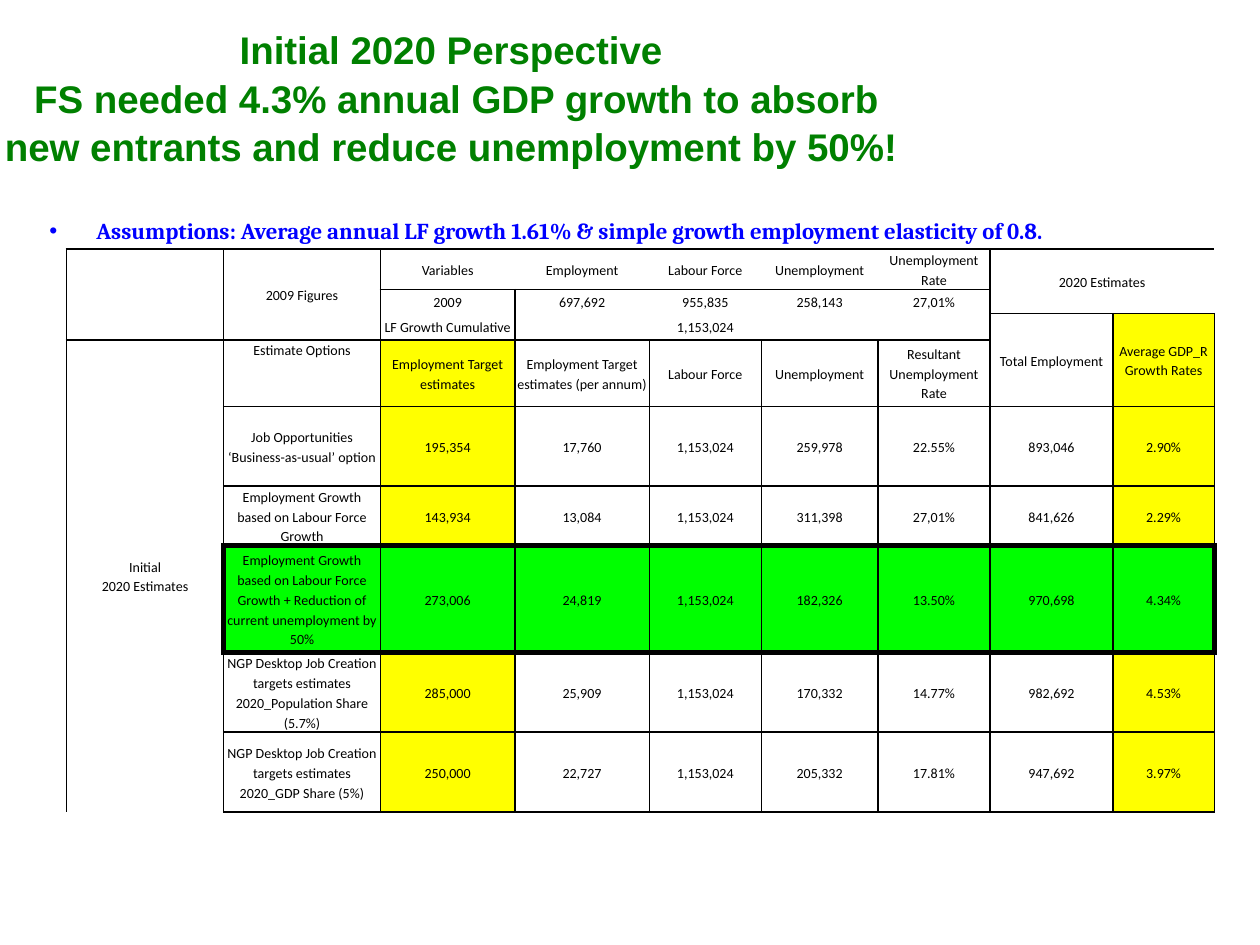
from lxml import etree
from pptx import Presentation
from pptx.dml.color import RGBColor
from pptx.enum.text import MSO_ANCHOR, MSO_AUTO_SIZE, PP_ALIGN
from pptx.oxml.ns import qn
from pptx.util import Cm, Pt

CENTER, JUSTIFY = PP_ALIGN.CENTER, PP_ALIGN.JUSTIFY
TOP, MIDDLE = MSO_ANCHOR.TOP, MSO_ANCHOR.MIDDLE
NO_AUTOFIT = MSO_AUTO_SIZE.NONE

BLACK = RGBColor(0, 0, 0)
BLUE = RGBColor(0, 0, 0xFF)
DARK_GREEN = RGBColor(0, 0x80, 0)
LIME = RGBColor(0, 0xFF, 0)
YELLOW = RGBColor(0xFF, 0xFF, 0)

COLUMN_WIDTHS = [3.17, 3.16, 2.71, 2.71, 2.26, 2.35, 2.26, 2.48, 2.04]
ROW_HEIGHTS = [0.82, 0.48, 0.53, 1.34, 1.61, 1.2, 2.16, 1.6, 1.61]
ROWS = [
    ["", "2009 Figures", "Variables", "Employment", "Labour Force", "Unemployment",
     "Unemployment Rate", "2020 Estimates", ""],
    ["", "", "2009", "697,692", "955,835", "258,143", "27,01%", "", ""],
    ["", "", "LF Growth Cumulative", "", "1,153,024", "", "",
     "Total Employment", "Average GDP_R Growth Rates"],
    ["Initial\n2020 Estimates", "Estimate Options", "Employment Target estimates",
     "Employment Target estimates (per annum)", "Labour Force", "Unemployment",
     "Resultant Unemployment Rate", "", ""],
    ["", "Job Opportunities ‘Business-as-usual’ option", "195,354", "17,760",
     "1,153,024", "259,978", "22.55%", "893,046", "2.90%"],
    ["", "Employment Growth based on Labour Force Growth", "143,934", "13,084",
     "1,153,024", "311,398", "27,01%", "841,626", "2.29%"],
    ["", "Employment Growth based on Labour Force Growth + Reduction of current "
     "unemployment by 50%", "273,006", "24,819", "1,153,024", "182,326", "13.50%",
     "970,698", "4.34%"],
    ["", "NGP Desktop Job Creation targets estimates 2020_Population Share (5.7%)",
     "285,000", "25,909", "1,153,024", "170,332", "14.77%", "982,692", "4.53%"],
    ["", "NGP Desktop Job Creation targets estimates 2020_GDP Share (5%)",
     "250,000", "22,727", "1,153,024", "205,332", "17.81%", "947,692", "3.97%"],
]
# Blocks are (first row, first column, last row, last column).
MERGED_BLOCKS = [(0, 1, 2, 1), (0, 7, 1, 8), (2, 7, 3, 7), (2, 8, 3, 8), (3, 0, 8, 0)]
UNRULED_BLOCKS = [(0, 0, 2, 0), (0, 2, 0, 6), (1, 2, 2, 2), (1, 3, 2, 6)]
SIDES = {"a:lnL": (0, -1), "a:lnR": (0, 1), "a:lnT": (-1, 0), "a:lnB": (1, 0)}
OPTION_ROW = 4
TARGET_ROW = 6


def add_span(para, text, font_name, size, color, bold=False):
    span = para.add_run()
    span.text = text
    font = span.font
    font.name, font.size, font.bold = font_name, Pt(size), bold
    font.color.rgb = color


def place(shape, left, top, width, height):
    shape.left, shape.top = Cm(left), Cm(top)
    shape.width, shape.height = Cm(width), Cm(height)
    frame = shape.text_frame
    frame.word_wrap = True
    frame.auto_size = NO_AUTOFIT
    return frame


def fill_title(shape, left, top, width, height):
    frame = place(shape, left, top, width, height)
    frame.vertical_anchor = MIDDLE
    para = frame.paragraphs[0]
    para.alignment = CENTER
    para.line_spacing = 1.05
    add_span(para, "Initial 2020 Perspective", "Arial", 22, DARK_GREEN, True)
    para.add_line_break()
    add_span(para, " FS needed 4.3% annual GDP growth to absorb new entrants "
             "and reduce unemployment by 50%!", "Arial", 22, DARK_GREEN, True)


def fill_assumptions(shape, left, top, width, height):
    frame = place(shape, left, top, width, height)
    frame.vertical_anchor = TOP
    para = frame.paragraphs[0]
    para.level = 1
    para.alignment = JUSTIFY
    para.space_before = Pt(0)
    properties = para._p.get_or_add_pPr()
    properties.set("marL", str(Cm(0.95)))
    properties.set("indent", str(-Cm(0.95)))
    etree.SubElement(properties, qn("a:buFont"), typeface="Arial")
    etree.SubElement(properties, qn("a:buChar"), char="•")
    add_span(para, "Assumptions: Average annual LF growth 1.61% & simple growth "
             "employment elasticity of 0.8.", "Cambria", 13, BLUE, True)


def contains(block, row, column):
    return block[0] <= row <= block[2] and block[1] <= column <= block[3]


def border_width(row, column, row_step, column_step):
    """Points: 0 inside a block, 3 around the target row, otherwise 1."""
    next_row, next_column = row + row_step, column + column_step
    for block in MERGED_BLOCKS + UNRULED_BLOCKS:
        if contains(block, row, column) and contains(block, next_row, next_column):
            return 0
    target = (TARGET_ROW, 1, TARGET_ROW, len(COLUMN_WIDTHS) - 1)
    inside = contains(target, row, column)
    next_inside = contains(target, next_row, next_column)
    return 3 if inside != next_inside and column > 0 else 1


def rule_cell(cell, row, column):
    properties = cell._tc.get_or_add_tcPr()
    for tag, (row_step, column_step) in SIDES.items():
        points = border_width(row, column, row_step, column_step)
        line = etree.SubElement(properties, qn(tag), w=str(Pt(points)))
        if points:
            solid = etree.SubElement(line, qn("a:solidFill"))
            etree.SubElement(solid, qn("a:srgbClr"), val=str(BLACK))
        else:
            etree.SubElement(line, qn("a:noFill"))


def color_cell(cell, row, column):
    if row == TARGET_ROW and column > 0:
        color = LIME
    elif (column == 2 and row >= 3) or (column == 8 and row >= 2):
        color = YELLOW
    else:
        cell.fill.background()
        return
    cell.fill.solid()
    cell.fill.fore_color.rgb = color


def write_cell(cell, text, row, column):
    cell.margin_left = cell.margin_right = Cm(0.03)
    cell.margin_top = cell.margin_bottom = 0
    cell.vertical_anchor = TOP if (row, column) == (3, 1) else MIDDLE
    frame = cell.text_frame
    for index, line in enumerate(text.split("\n")):
        para = frame.add_paragraph() if index else frame.paragraphs[0]
        para.alignment = CENTER
        para.line_spacing = 1.15
        if row == OPTION_ROW and column >= 2:
            para.space_after = Pt(10)
        if line:
            add_span(para, line, "Calibri", 8, BLACK)
        else:
            etree.SubElement(para._p, qn("a:endParaRPr"), sz="800")


def add_estimates_table(page, left, top):
    table = page.shapes.add_table(
        len(ROW_HEIGHTS), len(COLUMN_WIDTHS), Cm(left), Cm(top),
        Cm(sum(COLUMN_WIDTHS)), Cm(sum(ROW_HEIGHTS))).table
    table.first_row = table.horz_banding = False
    for column, width in zip(table.columns, COLUMN_WIDTHS):
        column.width = Cm(width)
    for row, height in zip(table.rows, ROW_HEIGHTS):
        row.height = Cm(height)
    for row, texts in enumerate(ROWS):
        for column, text in enumerate(texts):
            cell = table.cell(row, column)
            write_cell(cell, text, row, column)
            rule_cell(cell, row, column)
            color_cell(cell, row, column)
    for top_row, left_column, bottom_row, right_column in MERGED_BLOCKS:
        table.cell(top_row, left_column).merge(table.cell(bottom_row, right_column))


def main():
    deck = Presentation()
    deck.slide_width, deck.slide_height = Cm(25.4), Cm(19.05)
    page = deck.slides.add_slide(deck.slide_layouts[1])
    fill_title(page.shapes.title, -0.2, 1.27, 18.59, 1.35)
    fill_assumptions(page.placeholders[1], 0.74, 4.24, 24.13, 1.04)
    add_estimates_table(page, 1.34, 5.02)
    deck.save("out.pptx")


if __name__ == "__main__":
    main()
